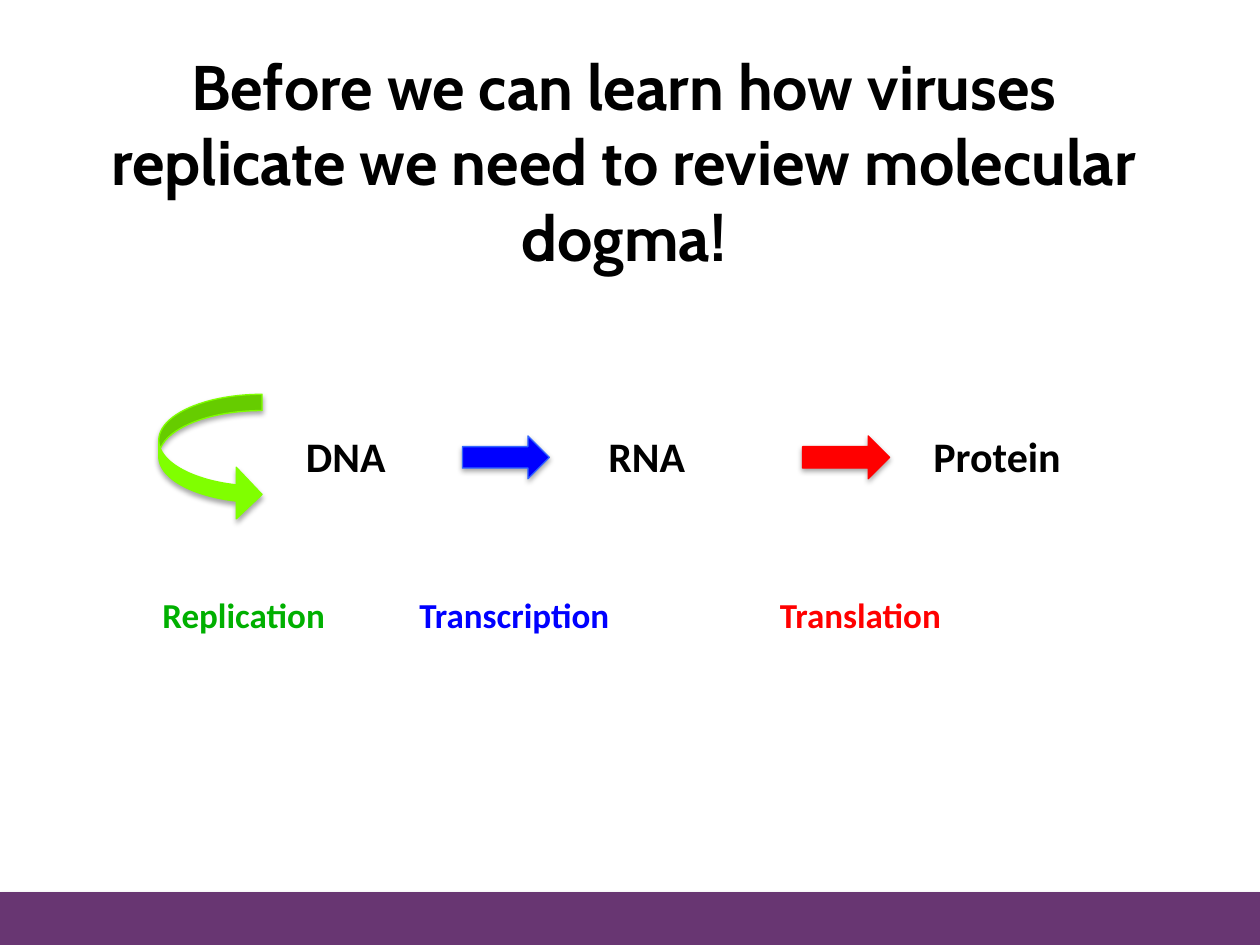
from lxml import etree
from pptx import Presentation
from pptx.dml.color import RGBColor
from pptx.enum.shapes import MSO_SHAPE
from pptx.enum.text import MSO_ANCHOR, MSO_AUTO_SIZE, PP_ALIGN
from pptx.oxml.ns import qn
from pptx.util import Inches, Pt

RECT = MSO_SHAPE.RECTANGLE
RIGHT_ARROW = MSO_SHAPE.RIGHT_ARROW
CURVED_ARROW = MSO_SHAPE.CURVED_RIGHT_ARROW
MIDDLE, CENTER = MSO_ANCHOR.MIDDLE, PP_ALIGN.CENTER
FIT_SHAPE = MSO_AUTO_SIZE.SHAPE_TO_FIT_TEXT

WIDTH, HEIGHT = 10, 7.5
BAND_HEIGHT = 0.42
BLACK = "000000"

TITLE = "Before we can learn how viruses replicate we need to review molecular dogma!"

# text, left, width
MOLECULES = [("DNA", 2.33, 1.03), ("RNA", 4.73, 1.09), ("Protein", 7.31, 1.74)]
MOLECULE_TOP, MOLECULE_HEIGHT = 3.37, 0.5

# text, left, width, colour
PROCESSES = [
    ("Replication", 1.19, 1.5, "00B000"),
    ("Transcription", 3.23, 1.72, "0000FF"),
    ("Translation", 6.09, 1.49, "FF0000"),
]
PROCESS_TOP, PROCESS_HEIGHT = 4.66, 0.44

# preset, left, width, height, fill, line
ARROWS = [
    (RIGHT_ARROW, 3.67, 0.69, 0.34, "0000FF", "3366FF"),
    (RIGHT_ARROW, 6.37, 0.69, 0.34, "FF0000", "FF0000"),
    (CURVED_ARROW, 1.26, 0.82, 1, "80FF00", "80FF00"),
]
ARROW_MIDDLE = 3.63
CURVE = (0.157, 0.5, 0.25)


def rgb(color):
    return RGBColor.from_string(color)


def add_shadow(sp):
    """Give the shape a soft shadow that falls straight down."""
    sp.shadow.inherit = False
    effects = sp._element.spPr.find(qn("a:effectLst"))
    shadow = etree.SubElement(
        effects, qn("a:outerShdw"), blurRad=str(Pt(3.1)), dist=str(Pt(1.8)),
        dir=str(90 * 60000), rotWithShape="0")
    color = etree.SubElement(shadow, qn("a:srgbClr"), val=BLACK)
    etree.SubElement(color, qn("a:alpha"), val="35000")


def add_shape(shapes, preset, box, fill, line=None):
    sp = shapes.add_shape(preset, *map(Inches, box))
    sp.fill.solid()
    sp.fill.fore_color.rgb = rgb(fill)
    if line:
        sp.line.color.rgb = rgb(line)
        sp.line.width = Pt(0.75)
    else:
        sp.line.fill.background()
    add_shadow(sp)
    return sp


def add_text(shapes, text, box, size, font="Calibri", color=BLACK, wrap=True):
    tf = shapes.add_textbox(*map(Inches, box)).text_frame
    tf.word_wrap = wrap
    p = tf.paragraphs[0]
    p.text = text
    p.font.name = font
    p.font.size = Pt(size)
    p.font.bold = True
    p.font.color.rgb = rgb(color)
    return tf


def main():
    prs = Presentation()
    prs.slide_width, prs.slide_height = Inches(WIDTH), Inches(HEIGHT)
    s = prs.slides.add_slide(prs.slide_layouts[6])

    add_shape(s.shapes, RECT, (0, HEIGHT - BAND_HEIGHT, WIDTH, BAND_HEIGHT), "683672")
    title = add_text(s.shapes, TITLE, (0.45, 0.65, 9, 1.25), 36, "Cabin")
    title.vertical_anchor = MIDDLE
    title.paragraphs[0].alignment = CENTER

    diagram = s.shapes.add_group_shape().shapes
    for text, left, width in MOLECULES:
        tf = add_text(diagram, text, (left, MOLECULE_TOP, width, MOLECULE_HEIGHT), 24)
        tf.auto_size = FIT_SHAPE
    for preset, left, width, height, fill, line in ARROWS:
        box = (left, ARROW_MIDDLE - height / 2, width, height)
        sp = add_shape(diagram, preset, box, fill, line)
        if preset == CURVED_ARROW:
            for i, value in enumerate(CURVE):
                sp.adjustments[i] = value
    for text, left, width, color in PROCESSES:
        tf = add_text(diagram, text, (left, PROCESS_TOP, width, PROCESS_HEIGHT), 20,
                      color=color, wrap=False)
        tf.auto_size = FIT_SHAPE

    prs.save("out.pptx")


if __name__ == "__main__":
    main()
